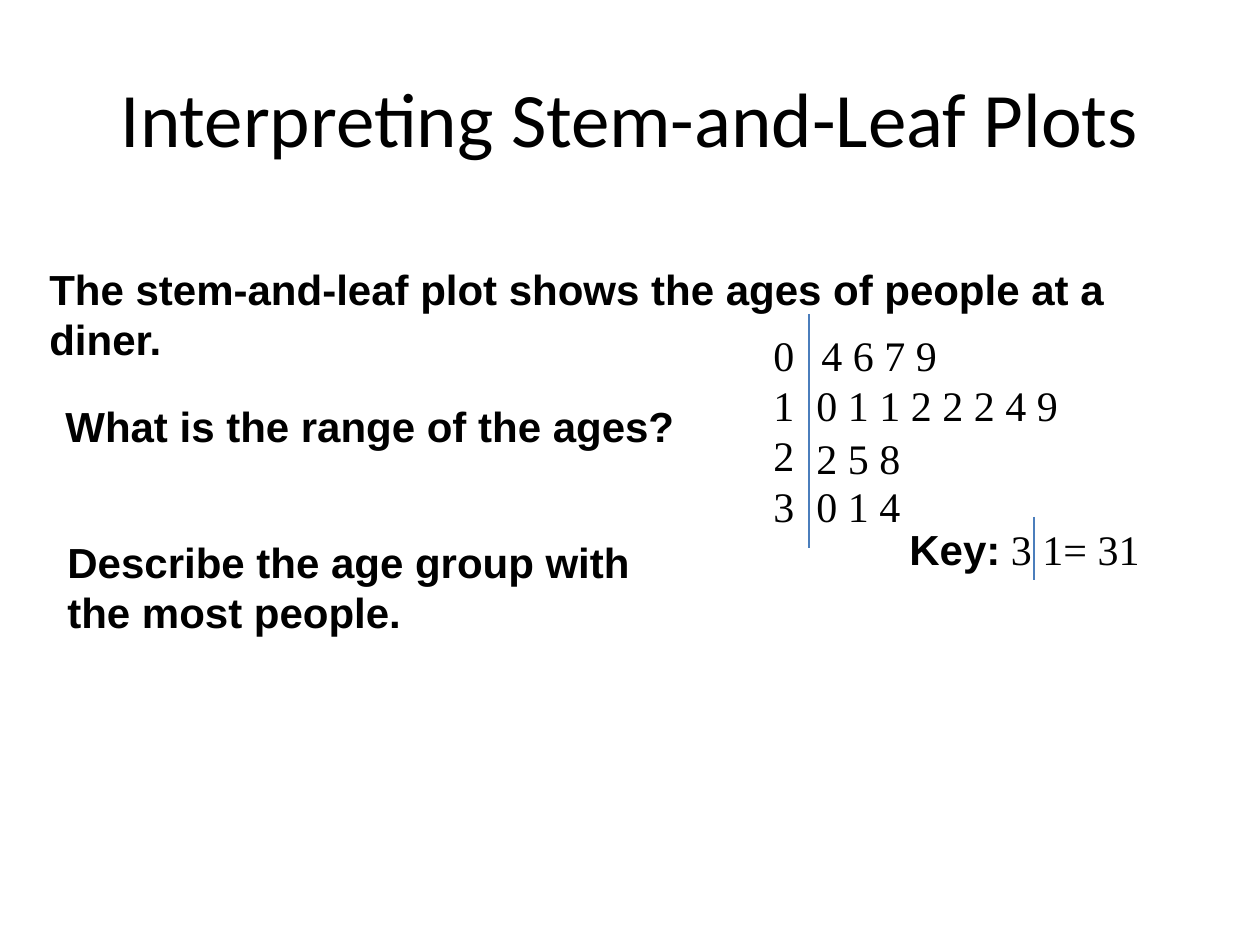
from dataclasses import dataclass

from lxml import etree
from pptx import Presentation
from pptx.dml.color import RGBColor
from pptx.enum.shapes import MSO_CONNECTOR
from pptx.enum.text import MSO_ANCHOR, PP_ALIGN
from pptx.oxml.ns import qn
from pptx.util import Emu, Pt

STRAIGHT = MSO_CONNECTOR.STRAIGHT
TOP = MSO_ANCHOR.TOP
MIDDLE = MSO_ANCHOR.MIDDLE
LEFT = PP_ALIGN.LEFT
CENTER = PP_ALIGN.CENTER

EMU_PER_PX = 914400 / 126
BLANK_LAYOUT = 6


@dataclass(frozen=True)
class Theme:
    text: RGBColor = RGBColor(0, 0, 0)
    rule: RGBColor = RGBColor(0x4B, 0x7E, 0xBC)
    background: RGBColor = RGBColor(255, 255, 255)
    title_font: str = "Calibri"
    label_font: str = "Arial"
    data_font: str = "Times New Roman"
    title_size: int = 44
    body_size: int = 24
    rule_width: float = 0.75


THEME = Theme()

STEMS = ["0", "1", "2", "3"]
LEAF_ROWS = [
    ("4 6 7 9", 809, 323, 168),
    ("0 1 1 2 2 2 4 9", 804, 373, 325),
    ("2 5 8", 804, 426, 147),
    ("0 1 4", 804, 474, 147),
]
PROMPTS = [
    ("The stem-and-leaf plot shows the ages of people at a diner.", (37, 257, 1187, 113), True),
    ("What is the range of the ages?", (53, 394, 634, 63), False),
    ("Describe the age group with the most people.", (55, 530, 630, 113), True),
]
ROW_HEIGHT = 63


def px(value):
    return Emu(round(value * EMU_PER_PX))


def style_font(font, name, size=THEME.body_size, bold=False):
    font.name = name
    font.size = Pt(size)
    font.bold = bold
    font.color.rgb = THEME.text


def add_text_frame(slide, box, wrap=True, anchor=TOP):
    frame = slide.shapes.add_textbox(*map(px, box)).text_frame
    frame.word_wrap = wrap
    frame.vertical_anchor = anchor
    return frame


def add_text(slide, lines, box, font_name, size=THEME.body_size, bold=False,
             wrap=True, anchor=TOP, alignment=LEFT):
    frame = add_text_frame(slide, box, wrap, anchor)
    frame.text = "\n".join(lines)
    for paragraph in frame.paragraphs:
        paragraph.alignment = alignment
        style_font(paragraph.font, font_name, size, bold)


def add_vertical_rule(slide, x, top, bottom):
    connector = slide.shapes.add_connector(STRAIGHT, px(x), px(top), px(x), px(bottom))
    connector.line.color.rgb = THEME.rule
    connector.line.width = Pt(THEME.rule_width)
    etree.SubElement(connector._element.spPr, qn("a:effectLst"))


def add_plot(slide):
    add_text(slide, STEMS, (761, 323, 47, 365), THEME.data_font, wrap=False)
    for leaves, left, top, width in LEAF_ROWS:
        add_text(slide, [leaves], (left, top, width, ROW_HEIGHT), THEME.data_font)
    add_vertical_rule(slide, 809, 314, 548)


def add_key(slide):
    top = 517
    paragraph = add_text_frame(slide, (897, top, 273, ROW_HEIGHT)).paragraphs[0]
    for text, font_name, bold in (
        ("Key:", THEME.label_font, True),
        (" 3 1= 31", THEME.data_font, False),
    ):
        run = paragraph.add_run()
        run.text = text
        style_font(run.font, font_name, bold=bold)
    add_vertical_rule(slide, 1034, top, top + ROW_HEIGHT)


def main():
    presentation = Presentation()
    presentation.slide_width = px(1260)
    presentation.slide_height = px(945)
    slide = presentation.slides.add_slide(presentation.slide_layouts[BLANK_LAYOUT])
    slide.background.fill.solid()
    slide.background.fill.fore_color.rgb = THEME.background

    add_text(slide, ["Interpreting Stem-and-Leaf Plots"], (63, 38, 1134, 158),
             THEME.title_font, THEME.title_size, anchor=MIDDLE, alignment=CENTER)
    for text, box, wrap in PROMPTS:
        add_text(slide, [text], box, THEME.label_font, bold=True, wrap=wrap)
    add_plot(slide)
    add_key(slide)
    presentation.save("out.pptx")


if __name__ == "__main__":
    main()
